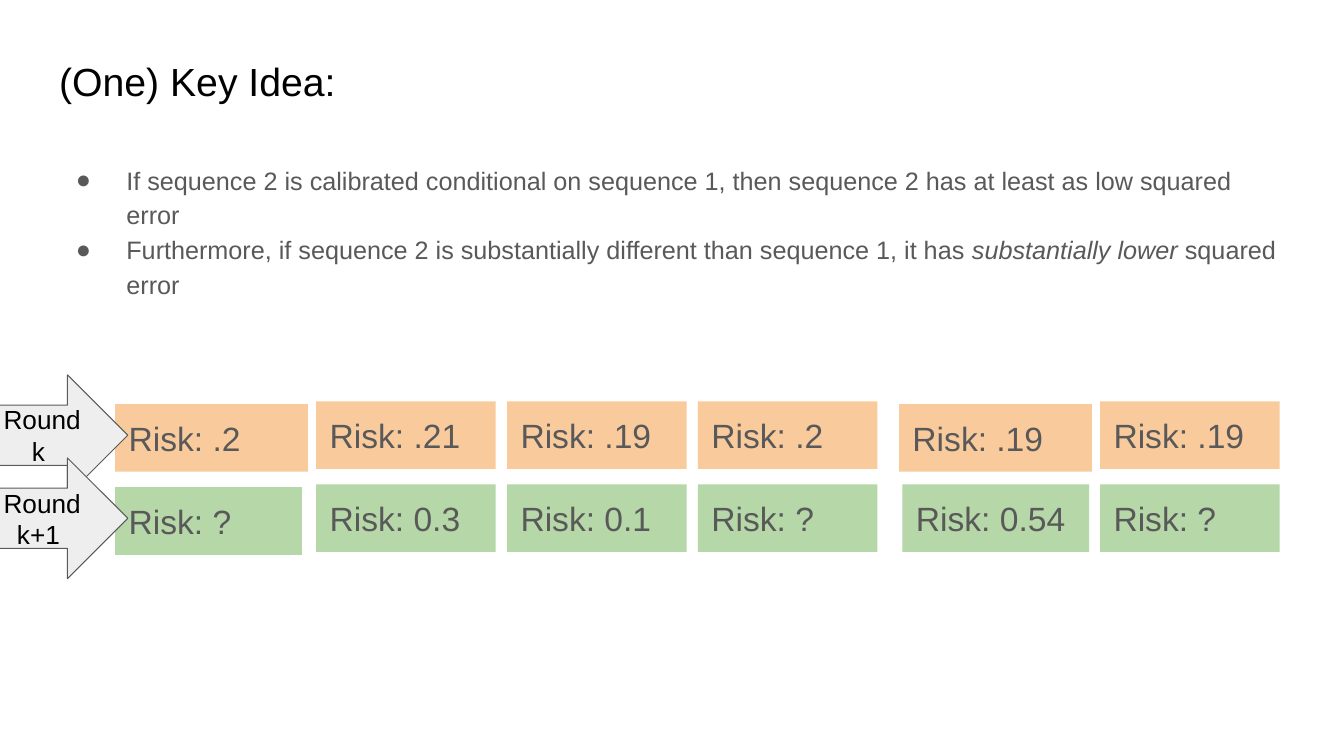
import pptx
import pptx.dml.color
import pptx.enum.shapes
import pptx.enum.text
import pptx.oxml.ns
import pptx.util
from dataclasses import dataclass
from lxml import etree

Pt = pptx.util.Pt
RGBColor = pptx.dml.color.RGBColor
PP_ALIGN = pptx.enum.text.PP_ALIGN
MSO_ANCHOR = pptx.enum.text.MSO_ANCHOR
MSO_SHAPE = pptx.enum.shapes.MSO_SHAPE


@dataclass(frozen=True)
class Theme:
    font: str = "Arial"
    black: str = "000000"
    gray: str = "595959"
    arrow_fill: str = "EEEEEE"
    orange: str = "F9CB9C"
    green: str = "B6D7A8"
    title_size: float = 28
    body_size: float = 18
    risk_size: float = 24
    round_size: float = 18.7


theme = Theme()


def prepare_frame(shape, anchor=MSO_ANCHOR.TOP):
    """Set the margins, wrapping and anchor; return the first paragraph."""
    frame = shape.text_frame
    frame.word_wrap = True
    frame.vertical_anchor = anchor
    frame.margin_left = frame.margin_right = Pt(9.6)
    frame.margin_top = frame.margin_bottom = Pt(9.6)
    return frame.paragraphs[0]


def write_text(paragraph, text, size, color=theme.gray, italic=False, align=PP_ALIGN.LEFT):
    """Add a formatted run to a paragraph."""
    paragraph.alignment = align
    run = paragraph.add_run()
    run.text = text
    run.font.name = theme.font
    run.font.size = Pt(size)
    run.font.italic = italic
    run.font.color.rgb = RGBColor.from_string(color)


presentation = pptx.Presentation()
presentation.slide_width = Pt(960)
presentation.slide_height = Pt(540)
slide = presentation.slides.add_slide(presentation.slide_layouts[6])

# Title
title = slide.shapes.add_textbox(Pt(32.7), Pt(31.2), Pt(894.5), Pt(60.1))
write_text(prepare_frame(title), "(One) Key Idea:", theme.title_size, color=theme.black)

# Bulleted claims, each a list of (text, italic) parts
claims = [
    [("If sequence 2 is calibrated conditional on sequence 1, "
      "then sequence 2 has at least as low squared error", False)],
    [("Furthermore, if sequence 2 is substantially different than sequence 1, it has ", False),
     ("substantially lower ", True),
     ("squared error", False)],
]
body = slide.shapes.add_textbox(Pt(32.7), Pt(105), Pt(894.5), Pt(388))
paragraph = prepare_frame(body)
for index, parts in enumerate(claims):
    if index > 0:
        paragraph = body.text_frame.add_paragraph()
    paragraph.line_spacing = 1.15
    for text, italic in parts:
        write_text(paragraph, text, theme.body_size, italic=italic)
    properties = paragraph._p.get_or_add_pPr()
    properties.set("marL", str(Pt(48)))
    properties.set("indent", str(-Pt(36)))
    bullet_color = etree.SubElement(properties, pptx.oxml.ns.qn("a:buClr"))
    etree.SubElement(bullet_color, pptx.oxml.ns.qn("a:srgbClr"), val=theme.gray)
    etree.SubElement(properties, pptx.oxml.ns.qn("a:buFont"), typeface=theme.font)
    etree.SubElement(properties, pptx.oxml.ns.qn("a:buChar"), char="●")

# Rounds: label, colour, risks, and the boxes that differ as {column: (left, drop, width)}
rounds = [
    ("Round k ", theme.orange, [".2", ".21", ".19", ".2", ".19", ".19"],
     {0: (82.3, 2, 137.7), 4: (642.2, 2, 137.7)}),
    ("Round k+1 ", theme.green, ["?", "0.3", "0.1", "?", "0.54", "?"],
     {0: (82.3, 2, 133.3), 4: (644.6, 0, 133.3)}),
]
column_lefts = [82.3, 225.8, 362.2, 498.5, 642.2, 785.8]
box_width, box_height = 128.3, 48.4
first_row_top, row_pitch = 286.6, 59.3
arrow_rise = 18.8

for row, (label, color, risks, exceptions) in enumerate(rounds):
    row_top = first_row_top + row * row_pitch

    # Risk boxes
    for column, risk in enumerate(risks):
        left, drop, width = exceptions.get(column, (column_lefts[column], 0, box_width))
        box = slide.shapes.add_shape(
            MSO_SHAPE.RECTANGLE, Pt(left), Pt(row_top + drop), Pt(width), Pt(box_height))
        box.shadow.inherit = False
        box.fill.solid()
        box.fill.fore_color.rgb = RGBColor.from_string(color)
        box.line.fill.background()
        write_text(prepare_frame(box), f"Risk: {risk}", theme.risk_size)

    # Round arrow
    arrow = slide.shapes.add_shape(
        MSO_SHAPE.RIGHT_ARROW, Pt(-9.5), Pt(row_top - arrow_rise), Pt(100.8), Pt(86.2))
    arrow.shadow.inherit = False
    arrow.fill.solid()
    arrow.fill.fore_color.rgb = RGBColor.from_string(theme.arrow_fill)
    arrow.line.color.rgb = RGBColor.from_string(theme.gray)
    arrow.line.width = Pt(0.75)
    write_text(prepare_frame(arrow, anchor=MSO_ANCHOR.MIDDLE), label, theme.round_size,
               color=theme.black, align=PP_ALIGN.CENTER)

presentation.save("out.pptx")
